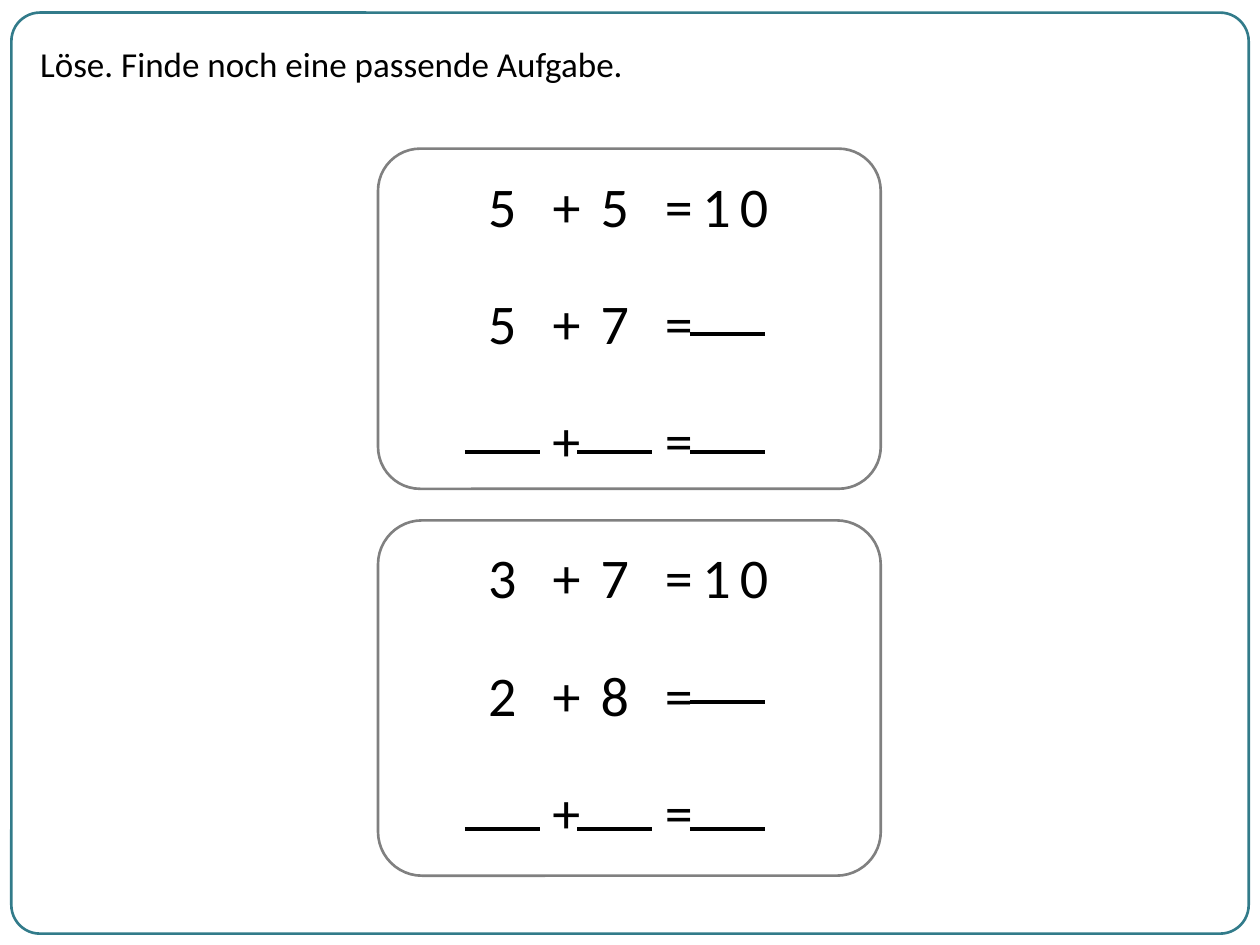
from dataclasses import dataclass
from itertools import accumulate
from pptx import Presentation
from pptx.dml.color import RGBColor as RGB
from pptx.enum.shapes import MSO_CONNECTOR as Conn, MSO_SHAPE as Form
from pptx.enum.text import MSO_ANCHOR as Anchor, PP_ALIGN as Align
from pptx.oxml.ns import qn
from pptx.util import Inches, Pt
from lxml.etree import SubElement


@dataclass(frozen=True)
class Theme:
    font: str = "Calibri"
    ink: str = "000000"
    teal: str = "327B8A"
    gray: str = "808080"
    task: int = 20
    digit: int = 32
    edge: float = 1.5
    rule: float = 2.25
    plain: str = "{2D5ABB26-0587-4C30-8999-92F81FD0307C}"


THEME = Theme()
UNIT = 2.38 / 8
WIDE = (2, 1, 2, 1, 1, 1)
EVEN = (1,) * 8
CARDS = [
    (1.18, 2.7, [("5+5=10", WIDE, (), 0),
                 ("5+7=  ", WIDE, (6,), 0.39),
                 ("  +  =  ", EVEN, (0, 3, 6), 0.4)]),
    (4.13, 2.82, [("3+7=10", WIDE, (), 0),
                  ("2+8=  ", WIDE, (6,), 0.36),
                  ("  +  =  ", EVEN, (0, 3, 6), 0.44)]),
]


def write(frame, text, size=THEME.digit, color=THEME.ink, align=Align.LEFT):
    para = frame.paragraphs[0]
    para.alignment = align
    run = para.add_run()
    run.text = text
    run.font.name = THEME.font
    run.font.size = Pt(size)
    run.font.color.rgb = RGB.from_string(color)


def panel(slide, x, y, w, h, color, bend):
    box = slide.shapes.add_shape(
        Form.ROUNDED_RECTANGLE, Inches(x), Inches(y), Inches(w), Inches(h))
    box.adjustments[0] = bend
    box.shadow.inherit = False
    box.fill.background()
    box.line.color.rgb = RGB.from_string(color)
    box.line.width = Pt(THEME.edge)


def blank(slide, x, y):
    line = slide.shapes.add_connector(
        Conn.STRAIGHT, Inches(x), Inches(y), Inches(x + 2 * UNIT), Inches(y))
    line.line.color.rgb = RGB.from_string(THEME.ink)
    line.line.width = Pt(THEME.rule)
    SubElement(line._element.spPr, qn("a:effectLst"))


def sum_row(slide, x, y, signs, spans):
    frame = slide.shapes.add_table(
        1, len(spans), Inches(x), Inches(y), Inches(8 * UNIT), Inches(0.63))
    for style in frame._element.iter(qn("a:tableStyleId")):
        style.text = THEME.plain
    table = frame.table
    table.first_row = table.horz_banding = False
    stops = [0, *accumulate(spans)]
    for i, sign in enumerate(signs):
        left, right = (Inches(UNIT * stop) for stop in stops[i:i + 2])
        table.columns[i].width = right - left
        cell = table.cell(0, i)
        cell.fill.background()
        cell.vertical_anchor = Anchor.MIDDLE
        if sign.strip():
            write(cell.text_frame, sign, align=Align.CENTER)


def card(slide, x, y, w, h, rows):
    panel(slide, x, y, w, h, THEME.gray, 0.124)
    for i, (signs, spans, gaps, drop) in enumerate(rows):
        left, top = x + 0.69, y + 0.15 + 0.93 * i
        sum_row(slide, left, top, signs, spans)
        for gap in gaps:
            blank(slide, left + gap * UNIT, top + drop)


def header(slide, x, y, w, h):
    box = slide.shapes.add_textbox(Inches(x), Inches(y), Inches(w), Inches(h))
    box.text_frame.word_wrap = True
    write(box.text_frame, "Löse. Finde noch eine passende Aufgabe.", size=THEME.task)


def main():
    deck = Presentation()
    deck.slide_width, deck.slide_height = Inches(10), Inches(7.5)
    slide = deck.slides.add_slide(deck.slide_layouts[6])
    panel(slide, 0.09, 0.1, 9.82, 7.31, THEME.teal, 0.031)
    header(slide, 0.22, 0.29, 8.44, 0.44)
    for top, height, rows in CARDS:
        card(slide, 3, top, 3.99, height, rows)
    deck.save("out.pptx")


if __name__ == "__main__":
    main()
